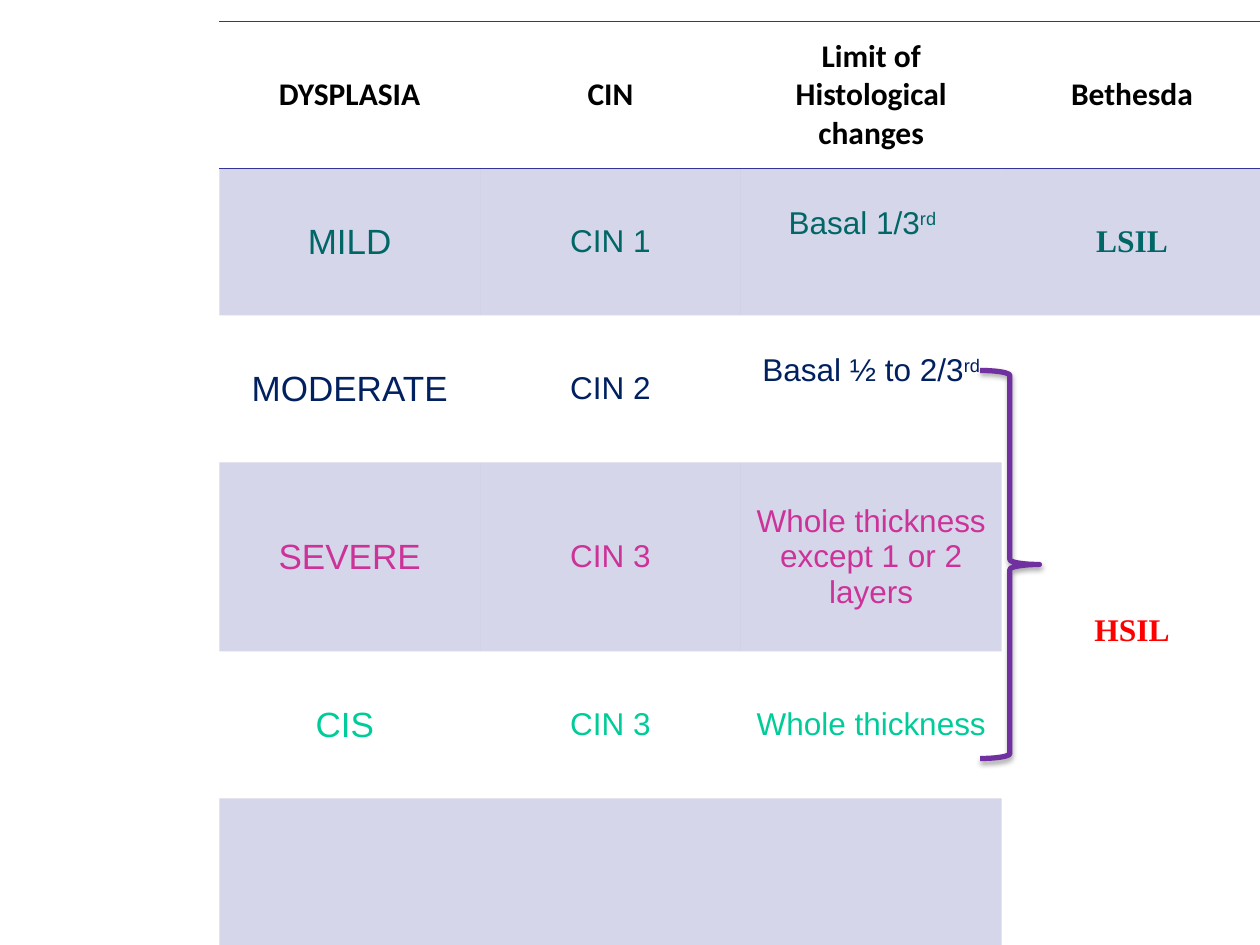
from pptx import Presentation
from pptx.dml.color import RGBColor
from pptx.enum.shapes import MSO_SHAPE as Shape
from pptx.enum.text import MSO_ANCHOR as Anchor, PP_ALIGN as Align
from pptx.oxml import parse_xml
from pptx.oxml.ns import nsdecls, qn
from pptx.util import Inches, Pt

NO_GRID_STYLE = "{2D5ABB26-0587-4C30-8999-92F81FD0307C}"


def rgb(color):
    return RGBColor.from_string(color)


class SlideBuilder:
    RULE, BRACE = "333399", "7030A0"
    BAND_ALPHA = 20000

    def __init__(self, deck):
        self.slide = deck.slides.add_slide(deck.slide_layouts[6])

    def table(self, left, top, col_widths, row_heights):
        frame = self.slide.shapes.add_table(
            len(row_heights), len(col_widths), Inches(left), Inches(top),
            Inches(sum(col_widths)), Inches(sum(row_heights)))
        grid = frame.table
        grid._tbl.tblPr.find(qn("a:tableStyleId")).text = NO_GRID_STYLE
        for column, width in zip(grid.columns, col_widths):
            column.width = Inches(width)
        for row, height in zip(grid.rows, row_heights):
            row.height = Inches(height)
        return grid

    def cell_text(self, cell, text, size, font, color, bold=False, raised=""):
        cell.vertical_anchor = Anchor.MIDDLE
        line = cell.text_frame.paragraphs[0]
        line.alignment = Align.CENTER
        line.font.size = Pt(size)
        line.font.name = font
        line.font.bold = bold
        line.font.color.rgb = rgb(color)
        line.add_run().text = text
        if raised:
            suffix = line.add_run()
            suffix.text = raised
            suffix._r.get_or_add_rPr().set("baseline", "30000")

    def cell_fill(self, cell, banded):
        if not banded:
            cell.fill.background()
            return
        cell.fill.solid()
        cell.fill.fore_color.rgb = rgb(self.RULE)
        tint = cell._tc.tcPr.find(qn("a:solidFill"))[0]
        tint.append(parse_xml(f'<a:alpha {nsdecls("a")} val="{self.BAND_ALPHA}"/>'))

    def cell_rules(self, cell, *sides):
        # Border lines must come before the fill, top before bottom
        for position, side in enumerate(sides):
            cell._tc.get_or_add_tcPr().insert(position, parse_xml(
                f'<a:ln{side} {nsdecls("a")} w="{Pt(1)}"><a:solidFill>'
                f'<a:srgbClr val="{self.RULE}"/></a:solidFill></a:ln{side}>'))

    def brace(self, left, top, width, height):
        brace = self.slide.shapes.add_shape(
            Shape.RIGHT_BRACE, Inches(left), Inches(top), Inches(width), Inches(height))
        brace.fill.background()
        brace.line.color.rgb = rgb(self.BRACE)
        brace.line.width = Pt(3)
        brace.shadow.inherit = False
        brace._element.spPr.find(qn("a:effectLst")).append(parse_xml(
            f'<a:outerShdw {nsdecls("a")} blurRad="{Pt(3.1)}" dist="{Pt(1.8)}" '
            'dir="5400000" rotWithShape="0"><a:srgbClr val="000000">'
            '<a:alpha val="35000"/></a:srgbClr></a:outerShdw>'))


HEADINGS = ["DYSPLASIA", "CIN", "Limit of Histological changes", "Bethesda"]
# Grade, CIN class, extent, raised suffix, colour
GRADES = [
    ("MILD", "CIN 1", "Basal 1/3", "rd", "006666"),
    ("MODERATE", "CIN 2", "Basal ½ to 2/3", "rd", "002060"),
    ("SEVERE", "CIN 3", "Whole thickness except 1 or 2 layers", "", "CC3399"),
    ("CIS ", "CIN 3", "Whole thickness", "", "00CC99"),
]
# Bethesda class by table row
BETHESDA = {1: ("LSIL", "006666"), 2: ("HSIL", "FF0000")}


def main():
    deck = Presentation()
    deck.slide_width, deck.slide_height = Inches(10), Inches(7.5)
    builder = SlideBuilder(deck)

    # Grid: equal rows, with a taller one for SEVERE
    low = 7 / 6
    grid = builder.table(1.74, 0.17, [2.07] * 4, [low, low, low, 1.5, low, low])
    last = len(grid.rows) - 1
    grid.cell(2, 3).merge(grid.cell(last, 3))
    grid.cell(last, 0).merge(grid.cell(last, 2))

    # Bands on odd rows, except in the merged HSIL cell
    for r in range(last + 1):
        for c in range(4):
            builder.cell_fill(grid.cell(r, c), r % 2 == 1 and (c < 3 or r == 1))

    # Header
    for c, heading in enumerate(HEADINGS):
        builder.cell_text(grid.cell(0, c), heading, 18, "Calibri", "000000", bold=True)
        builder.cell_rules(grid.cell(0, c), "T", "B")
        builder.cell_rules(grid.cell(last, c), "B")
    builder.cell_rules(grid.cell(2, 3), "B")

    # Grades
    for r, (grade, cin, extent, raised, color) in enumerate(GRADES, start=1):
        builder.cell_text(grid.cell(r, 0), grade, 20, "Arial", color)
        builder.cell_text(grid.cell(r, 1), cin, 18, "Arial", color)
        builder.cell_text(grid.cell(r, 2), extent, 18, "Arial", color, raised=raised)
        if raised:
            grid.cell(r, 2).margin_bottom = Inches(0.34)
    grid.cell(1, 2).margin_right = Inches(0.24)

    # Bethesda classes
    for r, (name, color) in BETHESDA.items():
        builder.cell_text(grid.cell(r, 3), name, 18, "Times New Roman", color, bold=True)

    # Brace joining the HSIL grades
    builder.brace(7.78, 2.94, 0.47, 3.08)

    deck.save("out.pptx")


if __name__ == "__main__":
    main()
